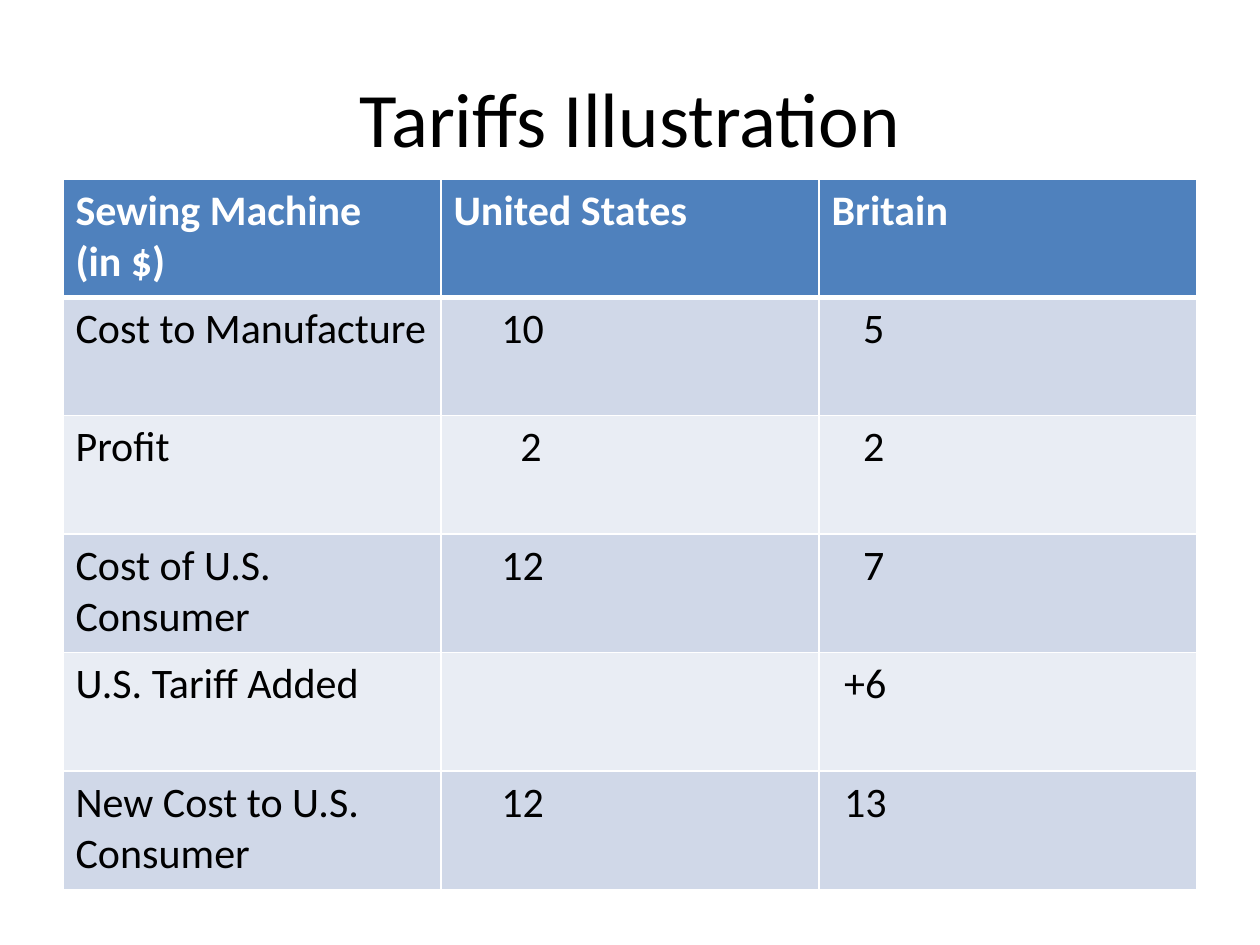
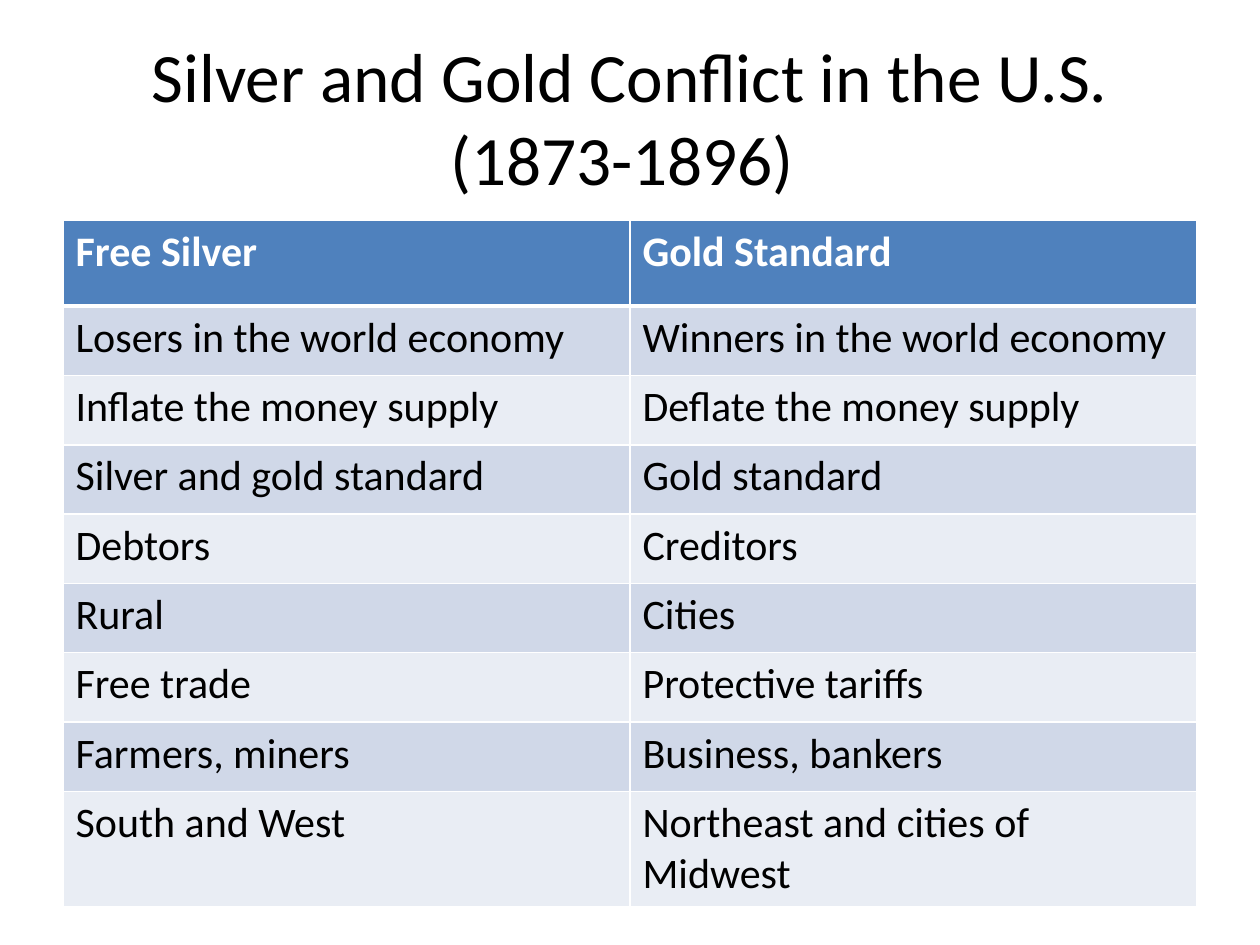
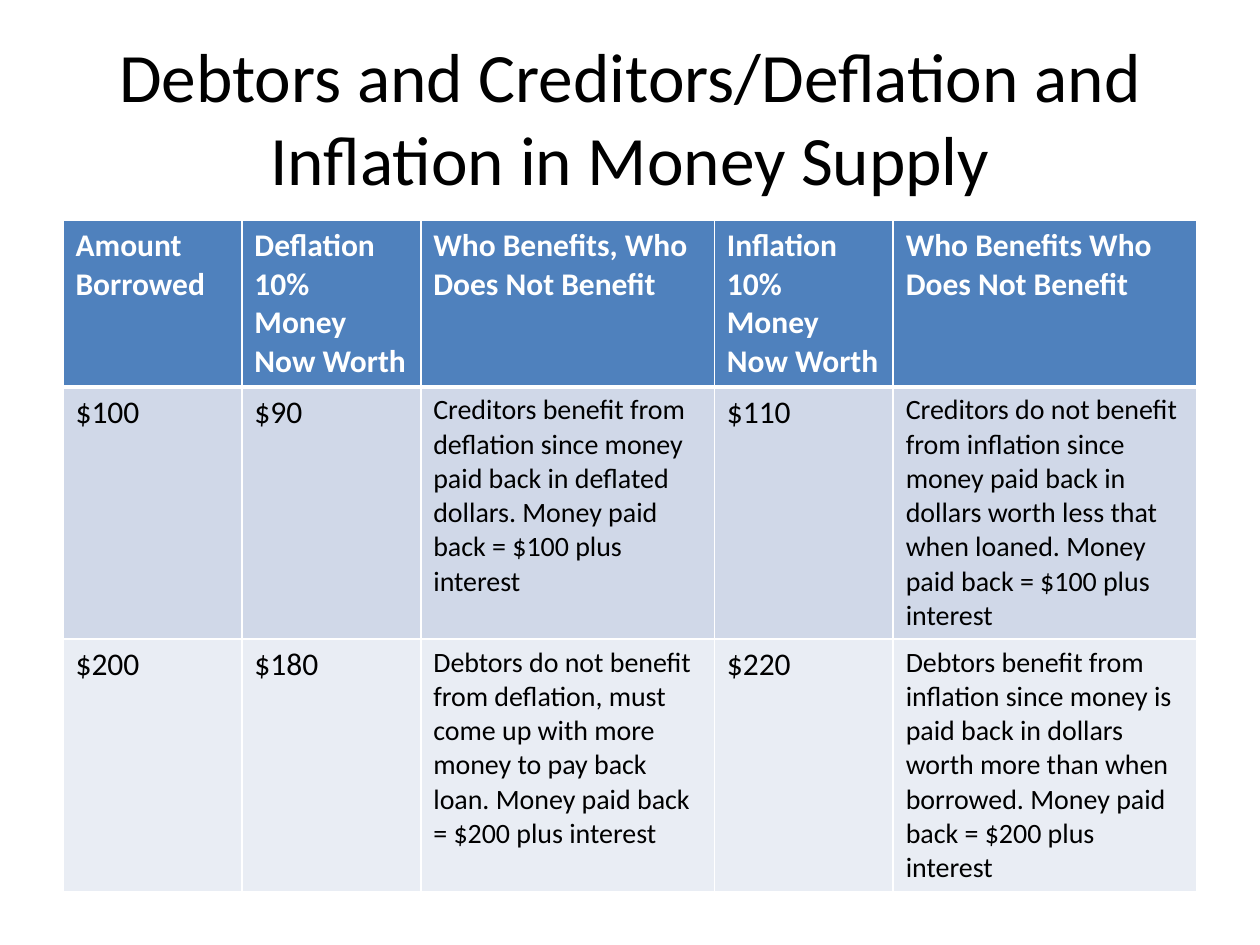
"""Builds three slides on tariffs, silver and gold, and the money supply."""
from dataclasses import dataclass

from lxml.etree import SubElement
from pptx import Presentation
from pptx.dml.color import RGBColor as Rgb
from pptx.enum.text import MSO_ANCHOR as Anchor, MSO_AUTO_SIZE as AutoSize, PP_ALIGN as Align
from pptx.oxml.ns import qn
from pptx.util import Inches, Pt


@dataclass(frozen=True)
class Theme:
    """Colours, type sizes and line widths of the deck."""
    font: str = "Calibri"
    ink: str = "000000"
    paper: str = "FFFFFF"
    header: str = "4F81BD"
    bands: tuple = ("D0D8E8", "E9EDF4")
    title: float = 44
    long_title: float = 39.6
    large: float = 24
    medium: float = 18
    small: float = 16
    rule: float = 1
    header_rule: float = 3


@dataclass(frozen=True)
class Entry:
    """A table entry with its own indent in inches or type size."""
    text: str
    indent: float = 0
    size: float = 0


THEME = Theme()
LEFT, WIDTH = 0.5, 9
CELL_MARGIN = 0.1
DIGIT = 0.15

TARIFF_ROWS = [
    ("Sewing Machine\n(in $)", "United States", "Britain"),
    ("Cost to Manufacture", "10", "5"),
    ("Profit", "2", "2"),
    ("Cost of U.S. Consumer", "12", "7"),
    ("U.S. Tariff Added", "", "+6"),
    ("New Cost to U.S. Consumer", "12", "13"),
]
CURRENCY_ROWS = [
    ("Free Silver", "Gold Standard"),
    ("Losers in the world economy", "Winners in the world economy"),
    ("Inflate the money supply", "Deflate the money supply"),
    ("Silver and gold standard", "Gold standard"),
    ("Debtors", "Creditors"),
    ("Rural", "Cities"),
    ("Free trade", "Protective tariffs"),
    ("Farmers, miners", "Business, bankers"),
    ("South and West", "Northeast and cities of Midwest"),
]
LOAN_ROWS = [
    ("Amount Borrowed", "Deflation 10%\nMoney Now Worth", "Who Benefits, Who Does Not Benefit",
     "Inflation 10%\nMoney Now Worth", "Who Benefits Who Does Not Benefit"),
    ("$100", "$90",
     "Creditors benefit from deflation since money paid back in deflated dollars. "
     "Money paid back = $100 plus interest",
     "$110",
     "Creditors do not benefit from inflation since money paid back in dollars worth less "
     "that when loaned. Money paid back = $100 plus interest"),
    ("$200", "$180",
     "Debtors do not benefit from deflation, must come up with more money to pay back loan. "
     "Money paid back = $200 plus interest",
     "$220",
     "Debtors benefit from inflation since money is paid back in dollars worth more than "
     "when borrowed. Money paid back = $200 plus interest"),
]


def put_text(frame, text, size, color=THEME.ink, bold=False, align=Align.LEFT):
    """Fill a text frame, one paragraph for each line of text."""
    frame.text = text
    for paragraph in frame.paragraphs:
        paragraph.alignment = align
        font = paragraph.font
        font.name, font.size, font.bold = THEME.font, Pt(size), bold
        font.color.rgb = Rgb.from_string(color)


def add_titled_slide(deck, heading, size):
    """Add a slide with a centred title."""
    slide = deck.slides.add_slide(deck.slide_layouts[5])
    title = slide.shapes.title
    title.left, title.top = Inches(LEFT), Inches(0.3)
    title.width, title.height = Inches(WIDTH), Inches(1.25)
    frame = title.text_frame
    put_text(frame, heading, size, align=Align.CENTER)
    frame.word_wrap, frame.auto_size = True, AutoSize.NONE
    frame.vertical_anchor = Anchor.MIDDLE
    return slide


def rule_cell(cell, top, bottom):
    """Draw the four borders of a cell."""
    properties = cell._tc.get_or_add_tcPr()
    for side, points in (("L", THEME.rule), ("R", THEME.rule), ("T", top), ("B", bottom)):
        border = SubElement(properties, qn(f"a:ln{side}"), w=str(Pt(points)))
        fill = SubElement(border, qn("a:solidFill"))
        SubElement(fill, qn("a:srgbClr"), val=THEME.paper)


def fill_cell(cell, entry, row, size):
    """Write and format one cell as header or banded body."""
    is_header = row == 0
    rule_cell(cell,
              THEME.header_rule if row == 1 else THEME.rule,
              THEME.header_rule if is_header else THEME.rule)
    cell.fill.solid()
    band = THEME.header if is_header else THEME.bands[(row - 1) % 2]
    cell.fill.fore_color.rgb = Rgb.from_string(band)
    cell.margin_left = Inches(CELL_MARGIN + entry.indent)
    put_text(cell.text_frame, entry.text, entry.size or size,
             color=THEME.paper if is_header else THEME.ink, bold=is_header)


def add_grid(slide, rows, top, widths, heights, size):
    """Add a banded table of strings and entries."""
    table = slide.shapes.add_table(len(rows), len(widths), Inches(LEFT), Inches(top),
                                   Inches(sum(widths)), Inches(sum(heights))).table
    for column, width in zip(table.columns, widths):
        column.width = Inches(width)
    for line, height in zip(table.rows, heights):
        line.height = Inches(height)
    for row, entries in enumerate(rows):
        for column, entry in enumerate(entries):
            if isinstance(entry, str):
                entry = Entry(entry)
            fill_cell(table.cell(row, column), entry, row, size)


def indent_figures(rows):
    """Indent the figures so that their last digits line up."""
    def figure(text, edge):
        return Entry(text, round(edge - DIGIT * len(text), 2))

    header, *body = rows
    return [header] + [(label, figure(states, 0.68), figure(britain, 0.4))
                       for label, states, britain in body]


def shrink_reasons(rows):
    """Set the longer explanations in the small size."""
    header, *body = rows
    return [header] + [[Entry(text, size=THEME.small if column in (2, 4) else 0)
                        for column, text in enumerate(line)] for line in body]


def main():
    """Build and save the deck."""
    deck = Presentation()
    deck.slide_width, deck.slide_height = Inches(10), Inches(7.5)

    tariffs = add_titled_slide(deck, "Tariffs Illustration", THEME.title)
    add_grid(tariffs, indent_figures(TARIFF_ROWS), 1.42, [WIDTH / 3] * 3, [0.94] * 6, THEME.large)

    currency = add_titled_slide(deck, "Silver and Gold Conflict in the U.S. (1873-1896) ",
                                THEME.long_title)
    add_grid(currency, CURRENCY_ROWS, 1.75, [WIDTH / 2] * 2, [0.68] + [0.55] * 7 + [0.9],
             THEME.large)

    loans = add_titled_slide(
        deck, "Debtors and Creditors/Deflation and Inflation in Money Supply", THEME.long_title)
    add_grid(loans, shrink_reasons(LOAN_ROWS), 1.75, [1.42, 1.42, 2.33, 1.42, 2.41],
             [1.31, 2, 2], THEME.medium)

    deck.save("out.pptx")


if __name__ == "__main__":
    main()
